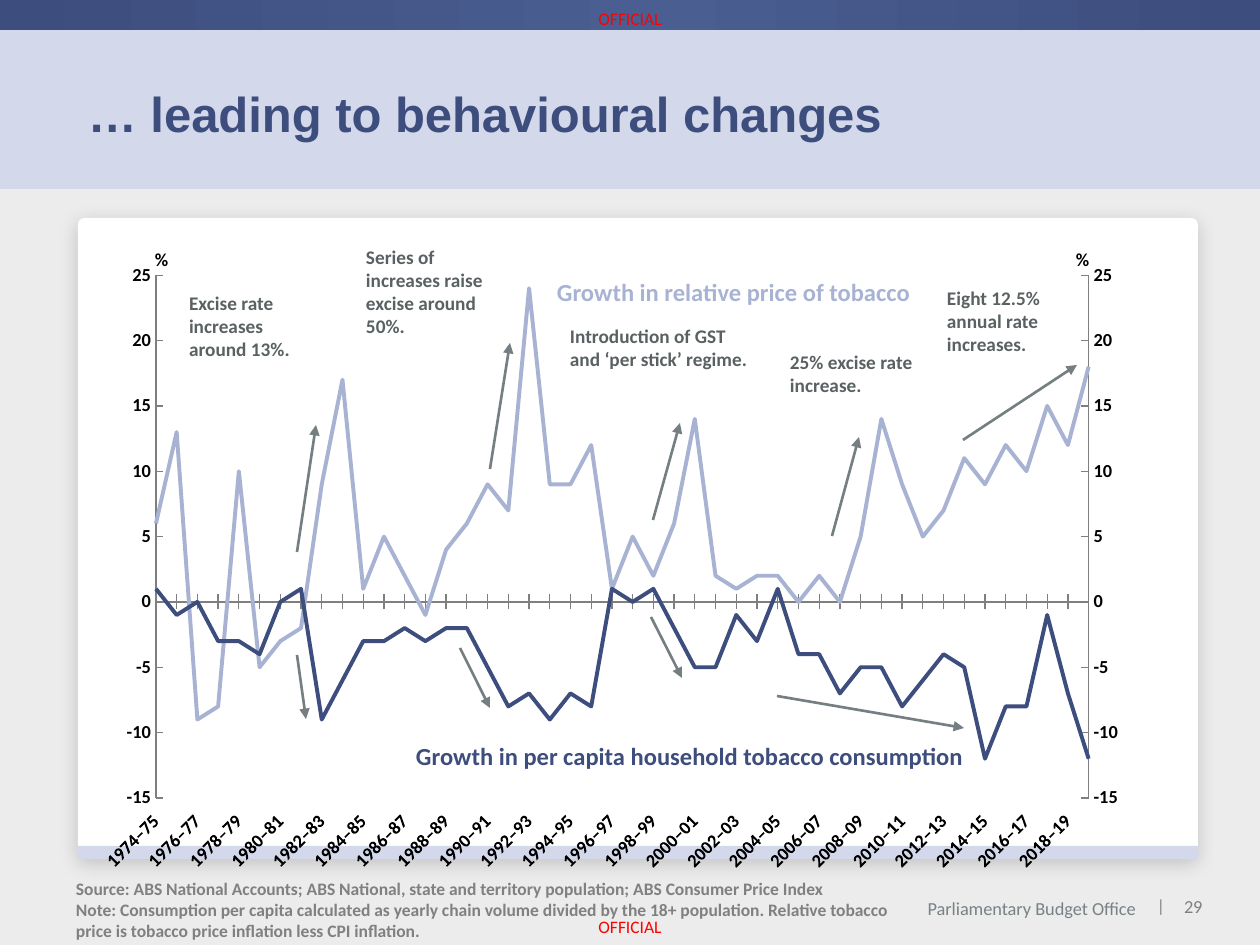
import copy

import lxml.etree
import pptx
import pptx.chart.data
import pptx.dml.color
import pptx.enum.chart
import pptx.enum.dml
import pptx.enum.shapes
import pptx.enum.text
import pptx.oxml.ns
import pptx.oxml.xmlchemy
import pptx.util

qn = pptx.oxml.ns.qn
SHAPE = pptx.enum.shapes.MSO_SHAPE
ALIGN = pptx.enum.text.PP_ALIGN
ANCHOR = pptx.enum.text.MSO_ANCHOR
TICK = pptx.enum.chart.XL_TICK_MARK
EMU_PER_PX = 914400 / 126


class Theme:
    body_font, title_font = "Calibri", "Arial"
    navy, navy_light, pale = "3D4D7D", "4A5E91", "D3D9EA"
    lilac, page, panel, white = "A8B3D4", "F2F2F2", "ECECEC", "FFFFFF"
    black, red, footer, office = "000000", "FF0000", "808080", "788184"
    arrow, note, axis = "757E80", "5A6162", "7F7F7F"
    title_size, label_size, note_size, small_size, tiny_size = 28, 14, 11, 10.5, 10
    arrow_width, series_width = 1.5, 2.25


FIRST_YEAR = 1974
PRICE = [6, 13, -9, -8, 10, -5, -3, -2, 9, 17, 1, 5, 2, -1, 4, 6, 9, 7, 24, 9, 9, 12, 1,
         5, 2, 6, 14, 2, 1, 2, 2, 0, 2, 0, 5, 14, 9, 5, 7, 11, 9, 12, 10, 15, 12, 18]
CONSUMPTION = [1, -1, 0, -3, -3, -4, 0, 1, -9, -6, -3, -3, -2, -3, -2, -2, -5, -8, -7, -9,
               -7, -8, 1, 0, 1, -2, -5, -5, -1, -3, 1, -4, -4, -7, -5, -5, -8, -6, -4, -5,
               -12, -8, -8, -1, -7, -12]

# Start and end of each arrow
ARROWS = [(297, 552, 316, 425), (297, 655, 306, 719), (490, 469, 510, 343),
          (460, 648, 490, 708), (653, 520, 680, 423), (651, 617, 682, 678),
          (832, 536, 859, 437), (963, 440, 1077, 365), (777, 696, 964, 728)]

ANNOTATIONS = [
    ("Excise rate increases around 13%.", (176, 285, 158, 112)),
    ("Series of increases raise excise around 50%.", (353, 239, 158, 112)),
    ("Introduction of GST and ‘per stick’ regime.", (557, 318, 210, 77)),
    ("25% excise rate increase.", (777, 344, 169, 77)),
    ("Eight 12.5% annual rate increases.", (934, 280, 169, 77)),
]
SOURCE = ("Source: ABS National Accounts; ABS National, state and territory population; "
          "ABS Consumer Price Index\n"
          "Note: Consumption per capita calculated as yearly chain volume divided by the 18+ "
          "population. Relative tobacco price is tobacco price inflation less CPI inflation.")


def px(*lengths):
    return [pptx.util.Emu(round(length * EMU_PER_PX)) for length in lengths]


def rgb(color):
    return pptx.dml.color.RGBColor.from_string(color)


def add_block(slide, kind, box, color):
    shape = slide.shapes.add_shape(kind, *px(*box))
    shape.shadow.inherit = False
    shape.fill.solid()
    shape.fill.fore_color.rgb = rgb(color)
    shape.line.fill.background()
    return shape


def add_text(slide, text, box, size, color, bold=True, font=Theme.body_font,
             align=ALIGN.LEFT, anchor=ANCHOR.TOP, insets=(13, 6), wrap=True):
    shape = slide.shapes.add_textbox(*px(*box))
    frame = shape.text_frame
    frame.word_wrap = wrap
    frame.vertical_anchor = anchor
    frame.margin_left, frame.margin_top = px(*insets)
    frame.margin_right, frame.margin_bottom = px(*insets)
    frame.text = text
    for paragraph in frame.paragraphs:
        paragraph.alignment = align
        for run in paragraph.runs:
            run.font.name, run.font.size = font, pptx.util.Pt(size)
            run.font.bold, run.font.color.rgb = bold, rgb(color)
    return shape


def add_arrow(slide, ends):
    connector = slide.shapes.add_connector(
        pptx.enum.shapes.MSO_CONNECTOR.STRAIGHT, *px(*ends))
    connector.line.color.rgb = rgb(Theme.arrow)
    connector.line.width = pptx.util.Pt(Theme.arrow_width)
    properties = connector._element.spPr
    lxml.etree.SubElement(properties.find(qn("a:ln")), qn("a:tailEnd"), type="triangle")
    lxml.etree.SubElement(properties, qn("a:effectLst"))


def add_top_band(slide):
    band = add_block(slide, SHAPE.RECTANGLE, (0, 0, 1260, 30), Theme.navy)
    band.fill.gradient()
    band.fill.gradient_angle = 0
    stop_list = band._element.spPr.find(".//" + qn("a:gsLst"))
    stop_list.append(copy.deepcopy(stop_list[-1]))
    stops = [(0, Theme.navy), (0.52, Theme.navy_light), (1, Theme.navy)]
    for stop, (position, color) in zip(band.fill.gradient_stops, stops):
        stop.position = position
        stop.color.rgb = rgb(color)


def add_card(slide):
    card = add_block(slide, SHAPE.ROUNDED_RECTANGLE, (78, 218, 1120, 641), Theme.white)
    card.adjustments[0] = 0.01
    effects = card._element.spPr.find(qn("a:effectLst"))
    shadow = lxml.etree.SubElement(
        effects, qn("a:outerShdw"), blurRad=str(pptx.util.Pt(11)),
        dist=str(pptx.util.Pt(3)), dir="5400000", algn="t", rotWithShape="0")
    color = lxml.etree.SubElement(shadow, qn("a:srgbClr"), val=Theme.black)
    lxml.etree.SubElement(color, qn("a:alpha"), val="16000")
    strip = add_block(slide, SHAPE.ROUND_2_SAME_RECTANGLE, (78, 846, 1120, 13), Theme.pale)
    strip.rotation = 180


def chart_element(tag, **attributes):
    element = pptx.oxml.xmlchemy.OxmlElement(tag)
    for name, value in attributes.items():
        element.set(name, value)
    return element


def set_plot_layout(plot_area, x, y, w, h):
    for old in plot_area.findall(qn("c:layout")):
        plot_area.remove(old)
    layout = chart_element("c:layout")
    manual = lxml.etree.SubElement(layout, qn("c:manualLayout"))
    for tag, value in [("layoutTarget", "inner"), ("xMode", "edge"), ("yMode", "edge"),
                       ("x", x), ("y", y), ("w", w), ("h", h)]:
        lxml.etree.SubElement(manual, qn("c:" + tag), val=str(value))
    plot_area.insert(0, layout)


def add_right_axis(plot_area):
    """Move the last series to a second line plot with its own value axis."""
    plot = plot_area.find(qn("c:lineChart"))
    category, value = plot_area.find(qn("c:catAx")), plot_area.find(qn("c:valAx"))
    right_plot, right_category, right_value = map(copy.deepcopy, (plot, category, value))
    series = right_plot.findall(qn("c:ser"))
    for extra in series[:-1]:
        right_plot.remove(extra)
    plot.remove(plot.findall(qn("c:ser"))[-1])
    for reference, number in zip(right_plot.findall(qn("c:axId")), ("5001", "5002")):
        reference.set("val", number)
    for axis, number, crossed in ((right_category, "5001", "5002"),
                                  (right_value, "5002", "5001")):
        axis.find(qn("c:axId")).set("val", number)
        axis.find(qn("c:crossAx")).set("val", crossed)
    right_category.find(qn("c:delete")).set("val", "1")
    right_value.find(qn("c:axPos")).set("val", "r")
    right_value.find(qn("c:crosses")).set("val", "max")
    plot.addnext(right_plot)
    value.addnext(right_value)
    right_value.addnext(right_category)


def add_growth_chart(slide):
    data = pptx.chart.data.CategoryChartData(number_format="General")
    data.categories = [f"{year}–{(year + 1) % 100:02}"
                       for year in range(FIRST_YEAR, FIRST_YEAR + len(PRICE))]
    data.add_series("Series 1", PRICE)
    data.add_series("Series 2", CONSUMPTION)
    data.add_series("Series 3", [1] + [None] * (len(PRICE) - 1))
    chart = slide.shapes.add_chart(pptx.enum.chart.XL_CHART_TYPE.LINE,
                                   *px(84, 242, 1091, 630), data).chart
    chart.has_legend = chart.has_title = False
    chart.font.name, chart.font.size = Theme.body_font, pptx.util.Pt(Theme.small_size)
    chart.font.bold, chart.font.color.rgb = True, rgb(Theme.black)
    chart.plots[0].vary_by_categories = False

    for series, color in zip(chart.series, (Theme.lilac, Theme.navy, None)):
        series.smooth = False
        if color:
            series.format.line.color.rgb = rgb(color)
            series.format.line.width = pptx.util.Pt(Theme.series_width)
        else:
            series.format.line.fill.background()

    # Axes
    category, value = chart.category_axis, chart.value_axis
    for axis, tick in ((category, TICK.CROSS), (value, TICK.INSIDE)):
        axis.major_tick_mark, axis.minor_tick_mark = tick, TICK.NONE
        axis.has_major_gridlines = False
        axis.format.line.color.rgb = rgb(Theme.axis)
    category.tick_label_position = pptx.enum.chart.XL_TICK_LABEL_POSITION.LOW
    category.tick_labels.font.bold = True
    category._element.find(".//" + qn("a:bodyPr")).set("rot", "-2700000")
    last = category._element.find(qn("c:noMultiLvlLbl"))
    last.addprevious(chart_element("c:tickLblSkip", val="2"))
    last.addprevious(chart_element("c:tickMarkSkip", val="1"))
    value.minimum_scale, value.maximum_scale, value.major_unit = -15, 25, 5
    value.tick_labels.number_format = "#,##0"
    value.tick_labels.number_format_is_linked = False
    for old in value._element.findall(qn("c:crossBetween")):
        value._element.remove(old)
    value._element.find(qn("c:crosses")).addnext(
        chart_element("c:crossBetween", val="midCat"))

    plot_area = chart._chartSpace.find(".//" + qn("c:plotArea"))
    set_plot_layout(plot_area, 0.066, 0.053, 0.855, 0.833)
    add_right_axis(plot_area)


def main():
    presentation = pptx.Presentation()
    presentation.slide_width, presentation.slide_height = px(1260, 945)
    slide = presentation.slides.add_slide(presentation.slide_layouts[6])
    slide.background.fill.solid()
    slide.background.fill.fore_color.rgb = rgb(Theme.page)

    # Page frame
    add_block(slide, SHAPE.RECTANGLE, (0, 29, 1260, 916), Theme.panel)
    add_block(slide, SHAPE.RECTANGLE, (0, 29, 1260, 160), Theme.pale)
    add_top_band(slide)
    add_card(slide)
    for top in (0, 908):
        add_text(slide, "OFFICIAL", (580, top, 100, 37), Theme.tiny_size, Theme.red, False,
                 align=ALIGN.CENTER, anchor=ANCHOR.MIDDLE, insets=(0, 0))

    # Footer
    for text, box, size, color, align in [
            ("Parliamentary Budget Office", (920, 897, 216, 23), Theme.small_size,
             Theme.office, ALIGN.RIGHT),
            ("|", (1157, 895, 6, 21), Theme.tiny_size, Theme.footer, ALIGN.RIGHT),
            ("29", (1184, 895, 21, 23), Theme.small_size, Theme.footer, ALIGN.LEFT)]:
        add_text(slide, text, box, size, color, False, align=align, insets=(0, 0), wrap=False)
    add_text(slide, SOURCE, (63, 872, 854, 73), Theme.tiny_size, Theme.footer)

    # Title
    title = add_text(slide, "… leading to behavioural changes", (74, 29, 1124, 161),
                     Theme.title_size, Theme.navy, font=Theme.title_font,
                     anchor=ANCHOR.MIDDLE, insets=(14, 6))
    title.text_frame.paragraphs[0].line_spacing = 1.1
    title.text_frame.paragraphs[0].space_after = pptx.util.Pt(6)

    # Chart with its labels
    add_growth_chart(slide)
    for left in (142, 1063):
        add_text(slide, "%", (left, 242, 39, 33), Theme.small_size, Theme.black)
    add_text(slide, "Growth in per capita household tobacco consumption",
             (403, 735, 660, 54), Theme.label_size, Theme.navy)
    add_text(slide, "Growth in relative price of tobacco",
             (544, 271, 557, 54), Theme.label_size, Theme.lilac)

    # Annotations
    for ends in ARROWS:
        add_arrow(slide, ends)
    for text, box in ANNOTATIONS:
        add_text(slide, text, box, Theme.note_size, Theme.note)

    presentation.save("out.pptx")


if __name__ == "__main__":
    main()
